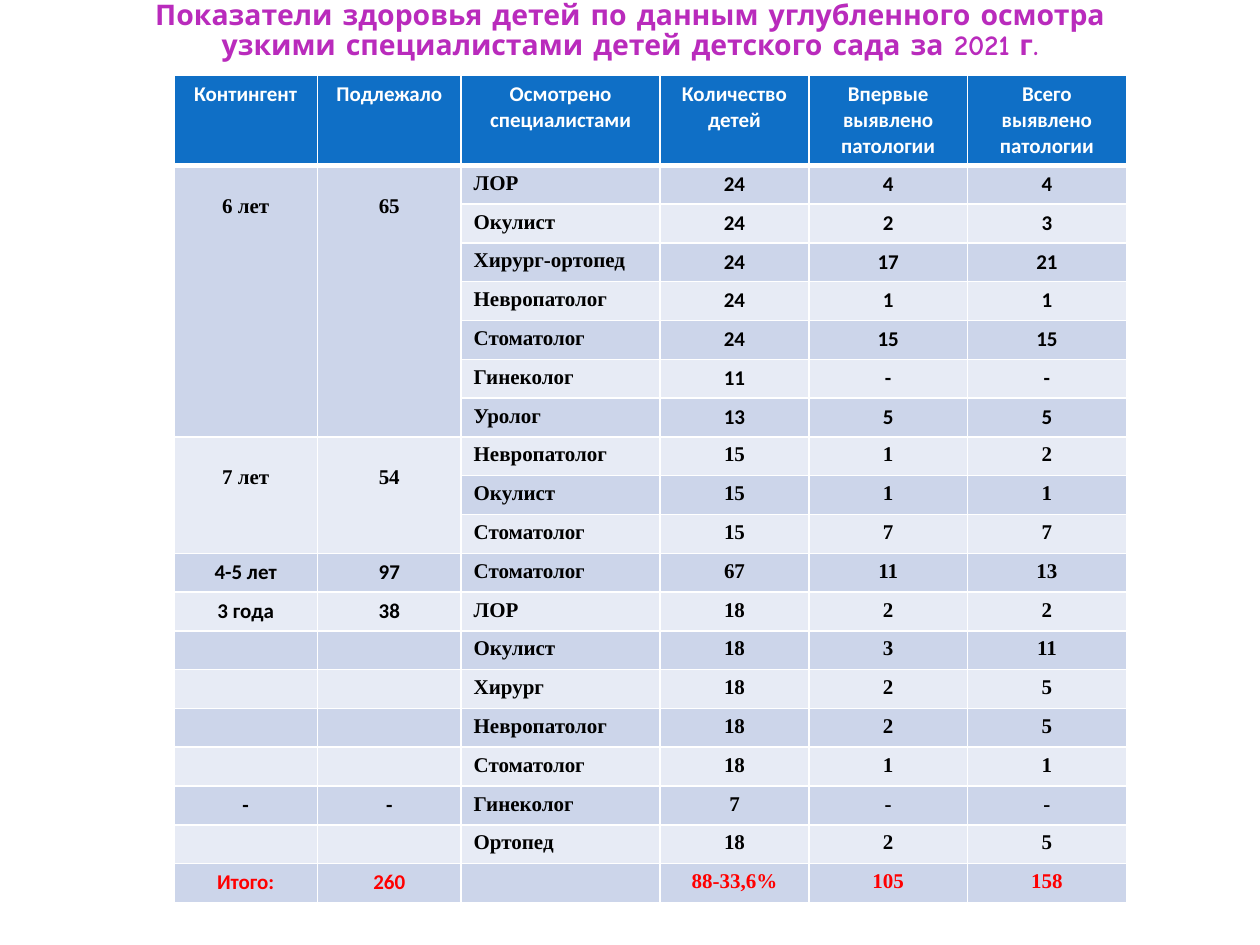
"""Build a slide with the results of children's health examinations."""
from dataclasses import dataclass

from lxml import etree
from pptx import Presentation
from pptx import table as tables
from pptx import util as u
from pptx.dml import color
from pptx.enum import text
from pptx.oxml import ns

WIDTH, HEIGHT = u.Inches(10), u.Inches(7.5)
COLORS = {
    "title": "B92BBC", "header": "0F6FC6", "dark": "CCD5EA", "light": "E7EBF5",
    "white": "FFFFFF", "black": "000000", "total": "FF0000",
}
SANS, SERIF, TITLE_FONT = "Calibri", "Times New Roman", "Comic Neue"
TITLE_LINES = (
    "Показатели здоровья детей по данным углубленного осмотра",
    "узкими специалистами детей детского сада за 2021 г.",
)
HEADERS = (
    "Контингент", "Подлежало", "Осмотрено\nспециалистами",
    "Количество детей", "Впервые выявлено патологии", "Всего выявлено патологии",
)
COLUMN_SHARES = (0.114, 0.114, 0.158, 0.118, 0.126, 0.126)
HEADER_SHARE, ROW_SHARE = 0.095, 0.0411
SPECIALIST = 2


@dataclass(frozen=True)
class Style:
    font: str
    color: str = "black"
    size: float = 12
    align: text.PP_ALIGN = text.PP_ALIGN.CENTER


@dataclass(frozen=True)
class Exam:
    specialist: str
    children: str
    first_found: str
    all_found: str
    age: str = ""
    due: str = ""
    span: int = 1
    label_font: str = SANS
    number_font: str = SERIF
    color: str = "black"

    def values(self) -> tuple[str, ...]:
        return (self.age, self.due, self.specialist,
                self.children, self.first_found, self.all_found)

    def style(self, column: int) -> Style:
        if column < SPECIALIST:
            return Style(self.label_font, self.color)
        if column == SPECIALIST:
            return Style(SERIF, self.color, align=text.PP_ALIGN.LEFT)
        return Style(self.number_font, self.color)


EXAMS = (
    Exam("ЛОР", "24", "4", "4", "6 лет", "65", 7, SERIF, SANS),
    Exam("Окулист", "24", "2", "3", number_font=SANS),
    Exam("Хирург-ортопед", "24", "17", "21", number_font=SANS),
    Exam("Невропатолог", "24", "1", "1", number_font=SANS),
    Exam("Стоматолог", "24", "15", "15", number_font=SANS),
    Exam("Гинеколог", "11", "-", "-", number_font=SANS),
    Exam("Уролог", "13", "5", "5", number_font=SANS),
    Exam("Невропатолог", "15", "1", "2", "7 лет", "54", 3, SERIF),
    Exam("Окулист", "15", "1", "1"),
    Exam("Стоматолог", "15", "7", "7"),
    Exam("Стоматолог", "67", "11", "13", "4-5 лет", "97"),
    Exam("ЛОР", "18", "2", "2", "3 года", "38"),
    Exam("Окулист", "18", "3", "11"),
    Exam("Хирург", "18", "2", "5"),
    Exam("Невропатолог", "18", "2", "5"),
    Exam("Стоматолог", "18", "1", "1"),
    Exam("Гинеколог", "7", "-", "-", "-", "-"),
    Exam("Ортопед", "18", "2", "5"),
    Exam("", "88-33,6%", "105", "158", "Итого:", "260", color="total"),
)


def rgb(name: str) -> color.RGBColor:
    return color.RGBColor.from_string(COLORS[name])


def write(para, words: str, style: Style) -> None:
    para.alignment = style.align
    if not words:
        end = etree.SubElement(para._p, ns.qn("a:endParaRPr"))
        end.set("sz", str(int(style.size * 100)))
        return
    span = para.add_run()
    span.text = words
    span.font.name, span.font.size, span.font.bold = style.font, u.Pt(style.size), True
    span.font.color.rgb = rgb(style.color)


def write_lines(frame, lines: tuple[str, ...] | list[str], style: Style) -> None:
    for index, line in enumerate(lines):
        para = frame.add_paragraph() if index else frame.paragraphs[0]
        write(para, line, style)


def add_borders(cell: tables._Cell, top: float, bottom: float) -> None:
    properties = cell._tc.get_or_add_tcPr()
    for side, points in (("L", 1), ("R", 1), ("T", top), ("B", bottom)):
        line = etree.SubElement(properties, ns.qn(f"a:ln{side}"), w=str(u.Pt(points)))
        fill = etree.SubElement(line, ns.qn("a:solidFill"))
        etree.SubElement(fill, ns.qn("a:srgbClr"), val=COLORS["white"])


def fill_cell(cell: tables._Cell, words: str, style: Style, fill: str,
              top: float = 1, bottom: float = 1) -> None:
    add_borders(cell, top, bottom)
    cell.fill.solid()
    cell.fill.fore_color.rgb = rgb(fill)
    write_lines(cell.text_frame, words.split("\n"), style)


def add_title(page) -> None:
    box = page.shapes.add_textbox(int(WIDTH * 0.05), 0, int(WIDTH * 0.9), int(HEIGHT * 0.08))
    frame = box.text_frame
    frame.word_wrap = True
    frame.vertical_anchor = text.MSO_ANCHOR.MIDDLE
    frame.margin_left = frame.margin_right = frame.margin_top = 0
    frame.margin_bottom = u.Inches(0.1)
    write_lines(frame, TITLE_LINES, Style(TITLE_FONT, "title", 16.2))
    for para in frame.paragraphs:
        para.line_spacing = 0.9


def add_exam_table(page) -> None:
    heights = [HEADER_SHARE] + [ROW_SHARE] * len(EXAMS)
    grid = page.shapes.add_table(
        len(heights), len(HEADERS), int(WIDTH * 0.138), int(HEIGHT * 0.08),
        int(WIDTH * sum(COLUMN_SHARES)), int(HEIGHT * sum(heights))).table
    for column, share in zip(grid.columns, COLUMN_SHARES):
        column.width = int(WIDTH * share)
    for row, share in zip(grid.rows, heights):
        row.height = int(HEIGHT * share)
    for column, words in enumerate(HEADERS):
        fill_cell(grid.cell(0, column), words, Style(SANS, "white"), "header", bottom=3)
    for row, exam in enumerate(EXAMS, 1):
        for column, words in enumerate(exam.values()):
            fill_cell(grid.cell(row, column), words, exam.style(column),
                      "dark" if row % 2 else "light", top=3 if row == 1 else 1)
    for row, exam in enumerate(EXAMS, 1):
        if exam.span > 1:
            for column in range(SPECIALIST):
                label = grid.cell(row, column)
                label.merge(grid.cell(row + exam.span - 1, column))
                label.margin_top = u.Inches(0.23)


def main() -> None:
    deck = Presentation()
    deck.slide_width, deck.slide_height = WIDTH, HEIGHT
    page = deck.slides.add_slide(deck.slide_layouts[6])
    add_title(page)
    add_exam_table(page)
    deck.save("out.pptx")


if __name__ == "__main__":
    main()
